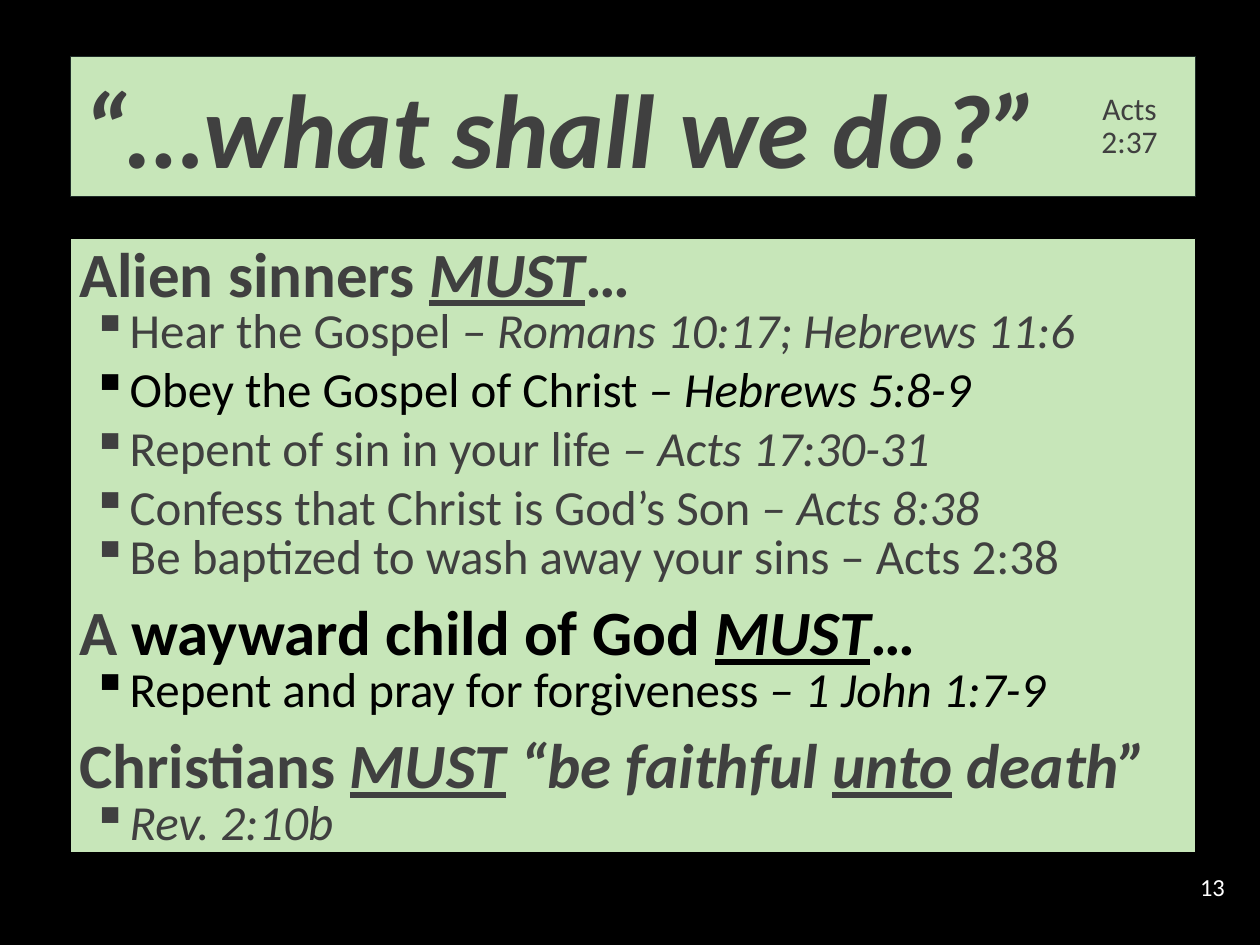
import lxml.etree
import pptx
import pptx.dml.color
import pptx.enum.shapes
import pptx.enum.text
import pptx.oxml.ns
import pptx.util
from pptx.util import Inches, Pt

RGBColor = pptx.dml.color.RGBColor
BLACK = RGBColor(0x00, 0x00, 0x00)
WHITE = RGBColor(0xFF, 0xFF, 0xFF)
GRAY = RGBColor(0x40, 0x40, 0x40)
GREEN = RGBColor(0xC7, 0xE6, 0xB9)
TITLE_EDGE = RGBColor(0x1F, 0x2C, 0x28)
LETTER_EDGE = RGBColor(0x33, 0x3F, 0x50)
ALIGN = pptx.enum.text.PP_ALIGN
MIDDLE = pptx.enum.text.MSO_ANCHOR.MIDDLE

SECTIONS = [
    {"heading": [("Alien sinners ", "", GRAY), ("MUST", "iu", GRAY), ("…", "", GRAY)],
     "leading": 38,
     "points": [("Hear the Gospel ", "– Romans 10:17; Hebrews 11:6", GRAY, 28),
                ("Obey the Gospel of Christ ", "– Hebrews 5:8-9", BLACK, None),
                ("Repent of sin in your life ", "– Acts 17:30-31", GRAY, None),
                ("Confess that Christ is God’s Son ", "– Acts 8:38", GRAY, None),
                ("Be baptized to wash away your sins – Acts 2:38", "", GRAY, 28)]},
    {"heading": [("A ", "", GRAY), ("wayward child of God ", "", BLACK),
                 ("MUST", "iu", BLACK), ("…", "", BLACK)],
     "leading": 36,
     "points": [("Repent and pray for forgiveness ", "– 1 John 1:7-9", BLACK, 28)]},
    {"heading": [("Christians ", "", GRAY), ("MUST", "iu", GRAY), (" “be faithful ", "i", GRAY),
                 ("unto", "iu", GRAY), (" death”", "i", GRAY)],
     "leading": 36,
     "points": [("", "Rev. 2:10b", GRAY, 28)]},
]


def add_panel(slide, box, edge):
    """Add a green rectangle and return its text frame."""
    panel = slide.shapes.add_shape(
        pptx.enum.shapes.MSO_SHAPE.RECTANGLE, *map(Inches, box))
    panel.shadow.inherit = False
    panel.fill.solid()
    panel.fill.fore_color.rgb = GREEN
    panel.line.color.rgb = edge
    panel.line.width = Pt(0.75)
    panel.text_frame.word_wrap = True
    return panel.text_frame


def style(paragraph, size, color, align=ALIGN.LEFT, bold=None, italic=None):
    """Set the alignment and font of a paragraph."""
    paragraph.alignment = align
    font = paragraph.font
    font.name = "Calibri"
    font.size = Pt(size)
    font.color.rgb = color
    font.bold = bold
    font.italic = italic


def add_run(paragraph, text, flags, color=None):
    """Append a run, italic for i and underlined for u in flags."""
    run = paragraph.add_run()
    run.text = text
    if "i" in flags:
        run.font.italic = True
    if "u" in flags:
        run.font.underline = True
    if color is not None:
        run.font.color.rgb = color


def add_bullet(paragraph):
    """Give a paragraph a square bullet with a hanging indent."""
    properties = paragraph._p.get_or_add_pPr()
    properties.set("marL", str(Inches(0.4)))
    properties.set("indent", str(Inches(-0.3)))
    bullet = lxml.etree.SubElement(properties, pptx.oxml.ns.qn("a:buChar"))
    bullet.set("char", "▪")


def outline_letters(run, color):
    """Draw a one-point line round the letters of a run."""
    qn = pptx.oxml.ns.qn
    line = lxml.etree.Element(qn("a:ln"), w=str(Pt(1)))
    fill = lxml.etree.SubElement(line, qn("a:solidFill"))
    lxml.etree.SubElement(fill, qn("a:srgbClr"), val=str(color))
    run.font._element.insert(0, line)


def add_duties(slide, box):
    """Add the panel of headings with their bulleted points."""
    frame = add_panel(slide, box, BLACK)
    frame.vertical_anchor = pptx.enum.text.MSO_ANCHOR.TOP
    frame.margin_left = frame.margin_right = Inches(0.07)
    frame.margin_top = frame.margin_bottom = Inches(0.04)
    for index, section in enumerate(SECTIONS):
        heading = frame.add_paragraph() if index else frame.paragraphs[0]
        heading.line_spacing = Pt(section["leading"])
        if index:
            heading.space_before = Pt(12)
        style(heading, 36, GRAY, bold=True)
        for text, flags, color in section["heading"]:
            add_run(heading, text, flags, color)
        for duty, verse, color, leading in section["points"]:
            point = frame.add_paragraph()
            if leading:
                point.line_spacing = Pt(leading)
            add_bullet(point)
            style(point, 28, color)
            for text, flags in ((duty, ""), (verse, "i")):
                if text:
                    add_run(point, text, flags)


def add_title(slide, box):
    """Add the title panel with its verse reference at the right."""
    frame = add_panel(slide, box, TITLE_EDGE)
    frame.vertical_anchor = MIDDLE
    title = frame.paragraphs[0]
    style(title, 60, GRAY, bold=True, italic=True)
    add_run(title, "“…what shall we do?”", "")
    outline_letters(title.runs[0], LETTER_EDGE)
    left, top, width, _ = box
    verse_box = (left + width - 0.86, top + 0.24, 0.67, 0.63)
    add_label(slide, verse_box, ["Acts ", "2:37"], 18, GRAY, ALIGN.CENTER, leading=19)


def add_label(slide, box, lines, size, color, align, leading=None):
    """Add a text box with one paragraph for each line."""
    frame = slide.shapes.add_textbox(*map(Inches, box)).text_frame
    frame.word_wrap = True
    if leading is None:
        frame.vertical_anchor = MIDDLE
    for index, text in enumerate(lines):
        line = frame.add_paragraph() if index else frame.paragraphs[0]
        line.text = text
        if leading:
            line.line_spacing = Pt(leading)
        style(line, size, color, align)


def main():
    """Build and save the slide."""
    deck = pptx.Presentation()
    deck.slide_width, deck.slide_height = Inches(10), Inches(7.5)
    slide = deck.slides.add_slide(deck.slide_layouts[6])
    slide.background.fill.solid()
    slide.background.fill.fore_color.rgb = BLACK
    add_duties(slide, (0.56, 1.89, 8.93, 4.88))
    add_title(slide, (0.56, 0.45, 8.93, 1.11))
    add_label(slide, (8.88, 6.67, 0.94, 0.73), ["13"], 14, WHITE, ALIGN.RIGHT)
    deck.save("out.pptx")


if __name__ == "__main__":
    main()
